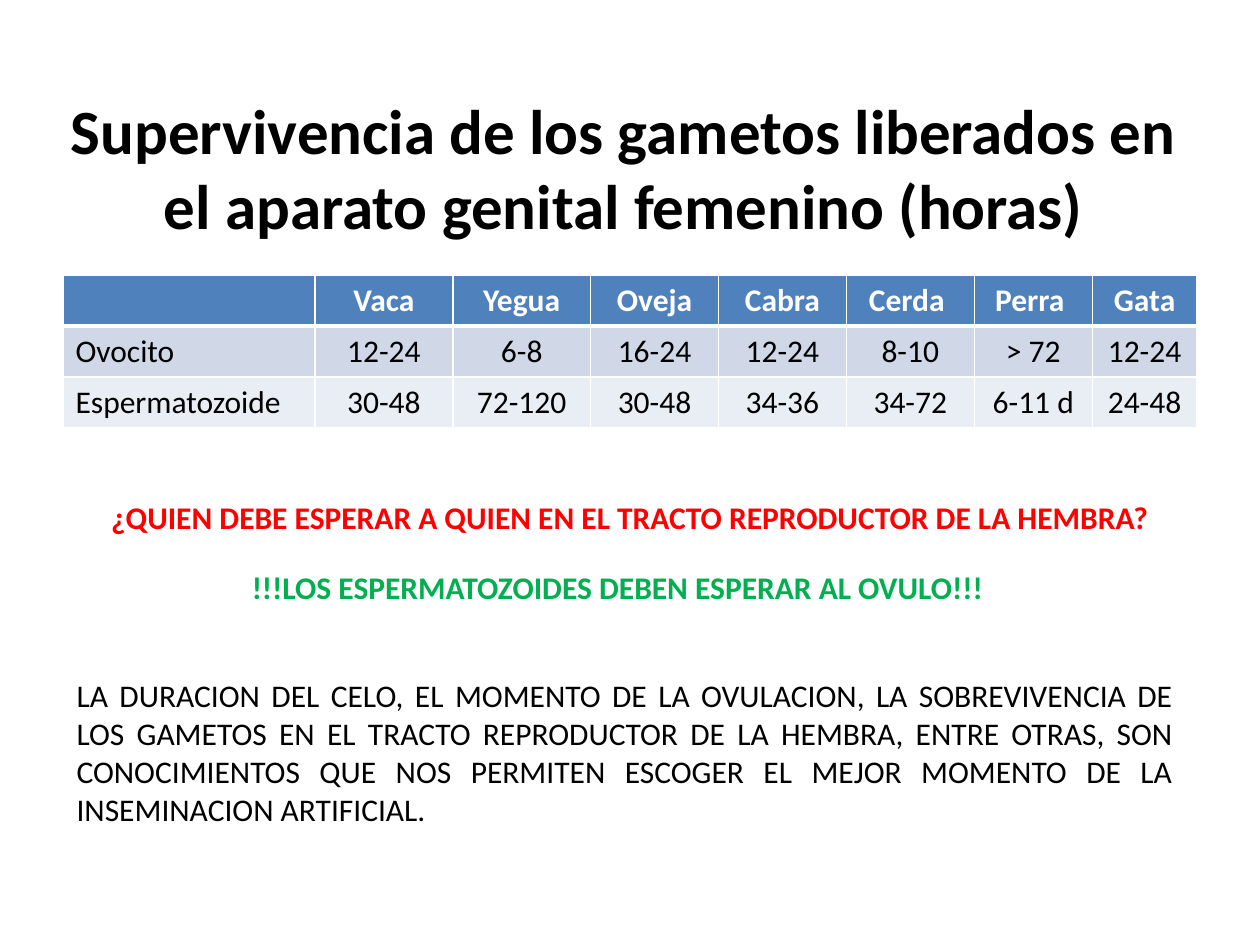
from dataclasses import dataclass

from lxml.etree import SubElement
from pptx import Presentation
from pptx.dml.color import RGBColor
from pptx.enum.text import MSO_ANCHOR as Anchor, MSO_AUTO_SIZE as AutoSize, PP_ALIGN as Align
from pptx.oxml.ns import qn
from pptx.util import Pt


@dataclass(frozen=True)
class Theme:
    font: str = "Calibri"
    title_size: int = 36
    body_size: int = 18
    ink: str = "000000"
    paper: str = "FFFFFF"
    question: str = "FF0000"
    answer: str = "00B050"
    header: str = "4F81BD"
    bands: tuple = ("D0D8E8", "E9EDF4")
    rule: int = 1
    header_rule: int = 3


class SlideBuilder:
    def __init__(self, slide, theme):
        self.slide = slide
        self.theme = theme

    def set_text(self, frame, wording, color, size, bold=False, align=Align.LEFT):
        frame.text = wording
        for paragraph in frame.paragraphs:
            paragraph.alignment = align
            for run in paragraph.runs:
                run.font.name = self.theme.font
                run.font.size = Pt(size)
                run.font.bold = bold
                run.font.color.rgb = RGBColor.from_string(color)

    def text(self, bounds, wording, color, size=None, bold=False,
             align=Align.LEFT, anchor=Anchor.TOP, wrap=True, grow=True):
        frame = self.slide.shapes.add_textbox(*map(Pt, bounds)).text_frame
        frame.word_wrap = wrap
        frame.vertical_anchor = anchor
        frame.auto_size = AutoSize.SHAPE_TO_FIT_TEXT if grow else AutoSize.NONE
        self.set_text(frame, wording, color, size or self.theme.body_size, bold, align)

    def border(self, cell, side, width):
        line = SubElement(cell._tc.get_or_add_tcPr(), qn(f"a:ln{side}"), w=str(Pt(width)))
        fill = SubElement(line, qn("a:solidFill"))
        SubElement(fill, qn("a:srgbClr"), val=self.theme.paper)

    def table(self, left, top, widths, row_height, rows):
        theme = self.theme
        grid = self.slide.shapes.add_table(
            len(rows), len(widths), Pt(left), Pt(top),
            Pt(sum(widths)), Pt(row_height * len(rows))).table
        for column, width in zip(grid.columns, widths):
            column.width = Pt(width)
        for r, values in enumerate(rows):
            grid.rows[r].height = Pt(row_height)
            is_header = r == 0
            background = theme.header if is_header else theme.bands[(r - 1) % 2]
            for c, value in enumerate(values):
                cell = grid.cell(r, c)
                self.set_text(cell.text_frame, value, theme.paper if is_header else theme.ink,
                              theme.body_size, is_header, Align.CENTER if c else Align.LEFT)
                for side in "LRTB":
                    under_header = (r, side) in ((0, "B"), (1, "T"))
                    self.border(cell, side, theme.header_rule if under_header else theme.rule)
                cell.fill.solid()
                cell.fill.fore_color.rgb = RGBColor.from_string(background)


SURVIVAL_HOURS = [
    ["", "Vaca", "Yegua", "Oveja", "Cabra", "Cerda ", "Perra ", "Gata"],
    ["Ovocito", "12-24", "6-8", "16-24", "12-24", "8-10", "> 72", "12-24"],
    ["Espermatozoide", "30-48", "72-120", "30-48", "34-36", "34-72", "6-11 d", "24-48"],
]
COLUMN_WIDTHS = [144, 78.75, 78.75, 73.1, 73.1, 73.1, 67.5, 59.7]


def main():
    deck = Presentation()
    deck.slide_width, deck.slide_height = Pt(720), Pt(540)
    theme = Theme()
    builder = SlideBuilder(deck.slides.add_slide(deck.slide_layouts[6]), theme)

    builder.text((32.4, 50.4, 648, 90),
                 "Supervivencia de los gametos liberados en el aparato genital femenino (horas)",
                 theme.ink, theme.title_size, bold=True, align=Align.CENTER,
                 anchor=Anchor.MIDDLE, grow=False)
    builder.table(36, 157, COLUMN_WIDTHS, 29.2, SURVIVAL_HOURS)
    builder.text((36.7, 281, 646.6, 29),
                 "¿QUIEN DEBE ESPERAR A QUIEN EN EL TRACTO REPRODUCTOR DE LA HEMBRA?",
                 theme.question, bold=True, align=Align.CENTER)
    builder.text((136.8, 321.3, 437, 29),
                 "!!!LOS ESPERMATOZOIDES DEBEN ESPERAR AL OVULO!!!",
                 theme.answer, bold=True, wrap=False)
    builder.text((36.7, 383, 640.8, 94.5),
                 "LA DURACION DEL CELO, EL MOMENTO DE LA OVULACION, LA SOBREVIVENCIA DE LOS "
                 "GAMETOS EN EL TRACTO REPRODUCTOR DE LA HEMBRA, ENTRE OTRAS, SON CONOCIMIENTOS "
                 "QUE NOS PERMITEN ESCOGER EL MEJOR MOMENTO DE LA INSEMINACION ARTIFICIAL.",
                 theme.ink, align=Align.JUSTIFY)

    deck.save("out.pptx")


if __name__ == "__main__":
    main()
